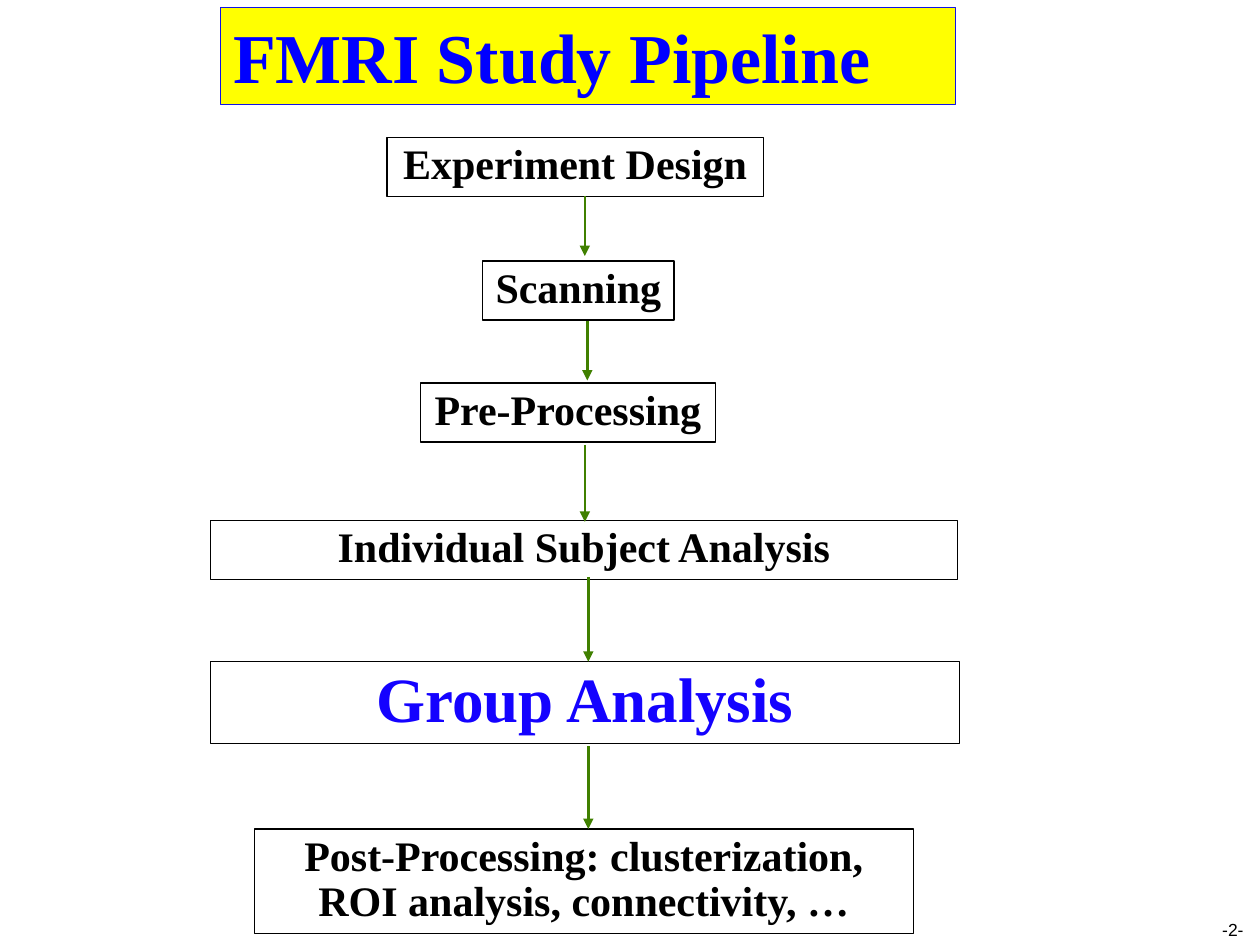
import pptx
import pptx.dml.color
import pptx.enum.shapes
import pptx.enum.text
import pptx.oxml
import pptx.oxml.ns
import pptx.util
from pptx.util import Cm

COLORS = {
    "black": "000000",
    "title_fill": "FFFF01",
    "title_line": "1113E4",
    "title_text": "0000FF",
    "highlight": "1402FF",
    "arrow": "408000",
}
ALIGN = pptx.enum.text.PP_ALIGN
SERIF = "Times New Roman"
STEP_HEIGHT = 1.19

# text, left, top, width, height, wrap, size, color
STEPS = [
    ("Experiment Design", 7.8, 2.77, 7.59, STEP_HEIGHT, False, 24, "black"),
    ("Scanning", 9.73, 5.26, 3.86, STEP_HEIGHT, False, 24, "black"),
    ("Pre-Processing", 8.48, 7.72, 5.94, STEP_HEIGHT, False, 24, "black"),
    ("Individual Subject Analysis", 4.24, 10.49, 15.06, STEP_HEIGHT, True, 24, "black"),
    ("Group Analysis", 4.24, 13.34, 15.11, 1.65, True, 36, "highlight"),
    ("Post-Processing: clusterization, ROI analysis, connectivity, …",
     5.13, 16.71, 13.28, 2.11, True, 24, "black"),
]

# x, top, bottom
ARROWS = [
    (11.79, 3.96, 5.16),
    (11.84, 6.48, 7.67),
    (11.79, 8.97, 10.52),
    (11.86, 11.63, 13.34),
    (11.86, 15.04, 16.71),
]


def rgb(name):
    return pptx.dml.color.RGBColor.from_string(COLORS[name])


class SlideBuilder:
    """Draws pipeline elements on one slide; lengths are in centimetres."""

    def __init__(self, slide):
        self.slide = slide

    def set_text(self, shape, text, size, color, font=SERIF, bold=True,
                 align=ALIGN.LEFT, spacing=1.0, wrap=True):
        frame = shape.text_frame
        frame.text = text
        frame.word_wrap = wrap
        frame.vertical_anchor = pptx.enum.text.MSO_ANCHOR.TOP
        paragraph = frame.paragraphs[0]
        paragraph.alignment = align
        paragraph.line_spacing = spacing
        run_font = paragraph.runs[0].font
        run_font.name = font
        run_font.size = pptx.util.Pt(size)
        run_font.bold = bold
        run_font.color.rgb = rgb(color)

    def box(self, left, top, width, height, line="black", fill=None):
        shape = self.slide.shapes.add_shape(
            pptx.enum.shapes.MSO_SHAPE.RECTANGLE,
            Cm(left), Cm(top), Cm(width), Cm(height))
        shape.shadow.inherit = False
        if fill:
            shape.fill.solid()
            shape.fill.fore_color.rgb = rgb(fill)
        else:
            shape.fill.background()
        shape.line.color.rgb = rgb(line)
        shape.line.width = pptx.util.Pt(0.75)
        return shape

    def title(self, text):
        shape = self.box(4.45, 0.15, 14.81, 1.96, "title_line", "title_fill")
        self.set_text(shape, text, 40, "title_text")

    def step(self, text, left, top, width, height, wrap, size, color):
        shape = self.box(left, top, width, height)
        self.set_text(shape, text, size, color, align=ALIGN.CENTER,
                      spacing=0.9, wrap=wrap)

    def arrow(self, x, top, bottom):
        connector = self.slide.shapes.add_connector(
            pptx.enum.shapes.MSO_CONNECTOR.STRAIGHT,
            Cm(x), Cm(top), Cm(x), Cm(bottom))
        connector.line.color.rgb = rgb("arrow")
        connector.line.width = pptx.util.Pt(1.5)
        namespace = pptx.oxml.ns.nsdecls("a")
        line = connector.line._get_or_add_ln()
        line.append(pptx.oxml.parse_xml(f'<a:tailEnd {namespace} type="triangle"/>'))
        line.addnext(pptx.oxml.parse_xml(f"<a:effectLst {namespace}/>"))

    def page_number(self, text):
        shape = self.slide.shapes.add_textbox(
            Cm(24.64), Cm(18.52), Cm(0.66), Cm(0.43))
        frame = shape.text_frame
        frame.margin_left = frame.margin_right = 0
        frame.margin_top = frame.margin_bottom = 0
        self.set_text(shape, text, 10, "black", font="Arial", bold=False, wrap=False)


def main():
    presentation = pptx.Presentation()
    presentation.slide_width = Cm(25.4)
    presentation.slide_height = Cm(19.05)
    builder = SlideBuilder(
        presentation.slides.add_slide(presentation.slide_layouts[6]))
    builder.page_number("-2-")
    builder.title("FMRI Study Pipeline")
    for step in STEPS:
        builder.step(*step)
    for arrow in ARROWS:
        builder.arrow(*arrow)
    presentation.save("out.pptx")


if __name__ == "__main__":
    main()
